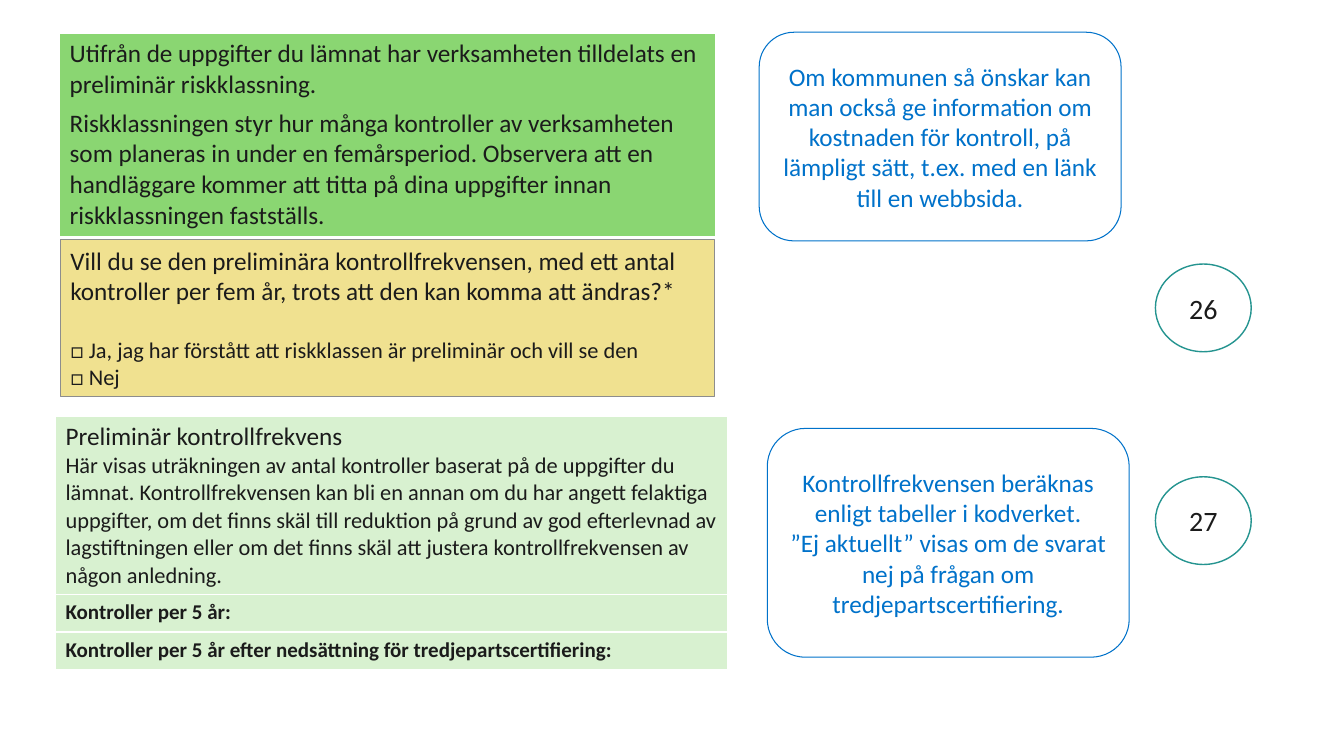
from dataclasses import dataclass

from lxml.etree import SubElement
from pptx import Presentation
from pptx.dml.color import RGBColor
from pptx.enum.shapes import MSO_SHAPE as Shape
from pptx.enum.text import MSO_ANCHOR as Anchor, PP_ALIGN as Align
from pptx.oxml.ns import qn
from pptx.util import Inches, Pt


@dataclass(frozen=True)
class Theme:
    font: str = "Calibri"
    ink: str = "1B1B1B"
    blue: str = "0072CA"
    teal: str = "259490"
    grey: str = "8D8D8D"
    white: str = "FFFFFF"
    green: str = "8AD672"
    pale_green: str = "D8F1D0"
    yellow: str = "F0E190"
    number: int = 20
    lead: int = 18
    body: int = 16
    label: int = 15


@dataclass(frozen=True)
class Line:
    text: str
    size: int
    bold: bool = False
    before: int = 0
    after: int = 0


class FormSlide:
    """Places elements by percent of the slide's width and height."""

    def __init__(self, presentation, theme):
        self.theme = theme
        self.width = presentation.slide_width
        self.height = presentation.slide_height
        self.shapes = presentation.slides.add_slide(presentation.slide_layouts[6]).shapes

    def across(self, share):
        return round(self.width * share / 100)

    def down(self, share):
        return round(self.height * share / 100)

    def set_text(self, frame, lines, color, align=Align.LEFT):
        frame.word_wrap = True
        for index, line in enumerate(lines):
            paragraph = frame.add_paragraph() if index else frame.paragraphs[0]
            paragraph.text = line.text
            paragraph.alignment = align
            paragraph.space_before = Pt(line.before)
            paragraph.space_after = Pt(line.after)
            font = paragraph.font
            font.name, font.size, font.bold = self.theme.font, Pt(line.size), line.bold
            font.color.rgb = RGBColor.from_string(color)

    def box(self, kind, left, top, width, height, lines, line_color, line_width,
            fill=None, color=None, align=Align.CENTER, anchor=Anchor.MIDDLE):
        shape = self.shapes.add_shape(kind, self.across(left), self.down(top),
                                      self.across(width), self.down(height))
        shape.shadow.inherit = False
        if fill:
            shape.fill.solid()
            shape.fill.fore_color.rgb = RGBColor.from_string(fill)
        else:
            shape.fill.background()
        shape.line.color.rgb = RGBColor.from_string(line_color)
        shape.line.width = Pt(line_width)
        shape.text_frame.vertical_anchor = anchor
        self.set_text(shape.text_frame, lines, color or self.theme.ink, align)

    def note(self, left, top, height, texts):
        blue = self.theme.blue
        lines = [Line(text, self.theme.lead) for text in texts]
        self.box(Shape.ROUNDED_RECTANGLE, left, top, 26.93, height, lines, blue, 0.75, color=blue)

    def number(self, top, value):
        self.box(Shape.OVAL, 85.97, top, 7.13, 11.6, [Line(value, self.theme.number)],
                 self.theme.teal, 1, fill=self.theme.white)

    def border(self, cell):
        properties = cell._tc.get_or_add_tcPr()
        for side in ("a:lnL", "a:lnR", "a:lnT", "a:lnB"):
            edge = SubElement(properties, qn(side), w=str(Pt(1)))
            SubElement(SubElement(edge, qn("a:solidFill")), qn("a:srgbClr"), val=self.theme.white)

    def table(self, left, top, width, fill, rows):
        """Each row is a pair of its height and its lines."""
        total = sum(height for height, _ in rows)
        table = self.shapes.add_table(len(rows), 1, self.across(left), self.down(top),
                                      self.across(width), self.down(total)).table
        table.first_row = table.horz_banding = False
        for row, (height, lines) in zip(table.rows, rows):
            row.height = self.down(height)
            cell = row.cells[0]
            self.border(cell)
            cell.fill.solid()
            cell.fill.fore_color.rgb = RGBColor.from_string(fill)
            self.set_text(cell.text_frame, lines, self.theme.ink)


def main():
    presentation = Presentation()
    presentation.slide_width, presentation.slide_height = Inches(13.33), Inches(7.5)
    theme = Theme()
    slide = FormSlide(presentation, theme)

    # Preliminary control frequency
    slide.table(4.13, 55.07, 50.04, theme.pale_green, [
        (23.6, [
            Line("Preliminär kontrollfrekvens", theme.lead),
            Line("Här visas uträkningen av antal kontroller baserat på de uppgifter du lämnat. "
                 "Kontrollfrekvensen kan bli en annan om du har angett felaktiga uppgifter, "
                 "om det finns skäl till reduktion på grund av god efterlevnad av lagstiftningen "
                 "eller om det finns skäl att justera kontrollfrekvensen av någon anledning.",
                 theme.body)]),
        (4.93, [Line("Kontroller per 5 år:", theme.label, bold=True)]),
        (4.93, [Line("Kontroller per 5 år efter nedsättning för tredjepartscertifiering:",
                     theme.label, bold=True)]),
    ])

    # Preliminary risk class
    slide.table(4.43, 4.4, 48.84, theme.green, [(26.67, [
        Line("Utifrån de uppgifter du lämnat har verksamheten tilldelats en "
             "preliminär riskklassning.", theme.lead, after=6),
        Line("Riskklassningen styr hur många kontroller av verksamheten som planeras in "
             "under en femårsperiod. Observera att en handläggare kommer att titta på dina "
             "uppgifter innan riskklassningen fastställs.", theme.lead)])])

    # Question with two choices
    slide.box(Shape.RECTANGLE, 4.5, 31.73, 48.69, 20.67, [
        Line("Vill du se den preliminära kontrollfrekvensen, med ett antal kontroller "
             "per fem år, trots att den kan komma att ändras?*", theme.lead),
        Line("□ Ja, jag har förstått att riskklassen är preliminär och vill se den",
             theme.body, before=22),
        Line("□ Nej", theme.body),
    ], theme.grey, 0.5, fill=theme.yellow, align=Align.LEFT, anchor=Anchor.TOP)

    # Notes to the municipality
    slide.note(56.49, 4.27, 27.6, [
        "Om kommunen så önskar kan man också ge information om kostnaden för kontroll, "
        "på lämpligt sätt, t.ex. med en länk till en webbsida."])
    slide.note(57.09, 56.67, 30.27, [
        "Kontrollfrekvensen beräknas enligt tabeller i kodverket.",
        "”Ej aktuellt” visas om de svarat nej på frågan om tredjepartscertifiering."])

    # Question numbers
    slide.number(34.93, "26")
    slide.number(63.07, "27")

    presentation.save("out.pptx")


if __name__ == "__main__":
    main()
